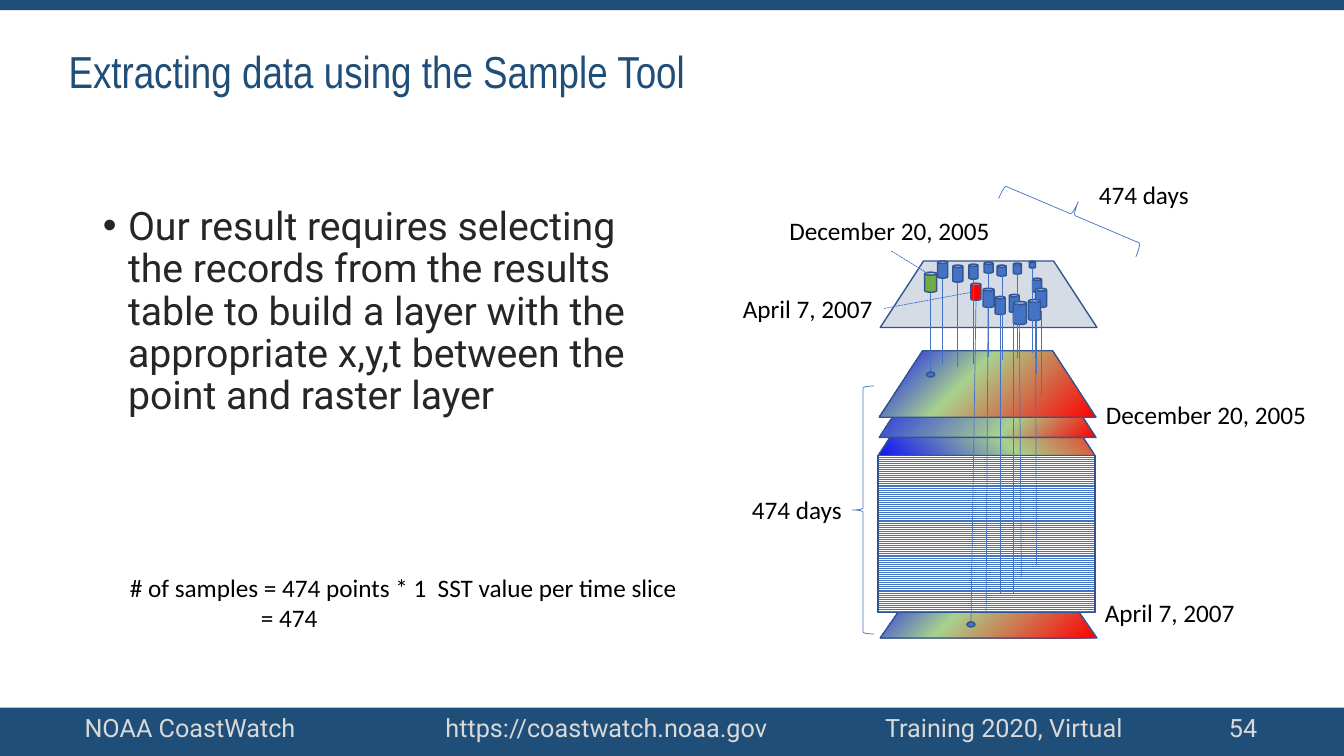
from lxml import etree
from pptx import Presentation
from pptx.dml.color import RGBColor
from pptx.enum.dml import MSO_LINE, MSO_PATTERN
from pptx.enum.shapes import MSO_CONNECTOR, MSO_SHAPE
from pptx.enum.text import MSO_ANCHOR, MSO_AUTO_SIZE, PP_ALIGN
from pptx.oxml.ns import qn
from pptx.util import Inches, Pt

RECT, CAN, OVAL = MSO_SHAPE.RECTANGLE, MSO_SHAPE.CAN, MSO_SHAPE.OVAL
LAYER = MSO_SHAPE.FLOWCHART_MANUAL_OPERATION
LEFT_BRACE, RIGHT_BRACE = MSO_SHAPE.LEFT_BRACE, MSO_SHAPE.RIGHT_BRACE
STRAIGHT, DASHED = MSO_CONNECTOR.STRAIGHT, MSO_LINE.SQUARE_DOT
STRIPES = MSO_PATTERN.LIGHT_HORIZONTAL
LEFT, MIDDLE = PP_ALIGN.LEFT, MSO_ANCHOR.MIDDLE
NO_FIT = MSO_AUTO_SIZE.NONE

CELL = 0.1  # the grid has ten columns and ten rows to the inch
COLUMNS, ROWS = 133.3, 75
LAYER_WIDTH = 21.5
DROP = 8.4  # rows spanned by a line that ends on the top layer

COLORS = {
    "navy": "1F4E79", "pale": "D9D9D9", "ink": "262626", "black": "000000",
    "white": "FFFFFF", "blue": "4472C4", "outline": "325491",
    "plane": "D6DCE5", "green": "70AD47", "red": "FF0000",
    "cold": "0C12F6", "mild": "A9D18E",
}

# left, top, height, share of the middle colour, cold corner (l, t, r, b)
TOP_LEFT, BOTTOM_LEFT = (0, 0, 100, 100), (0, 100, 100, 0)
LAYERS = [
    (87.3, 57.1, 6.2, 41, TOP_LEFT),
    (87.1, 38.6, 6.6, 50, BOTTOM_LEFT),
    (87.2, 36.8, 6.6, 65, TOP_LEFT),
    (87.2, 34.8, 6.6, 41, TOP_LEFT),
]
# left, top, width, height, colour
SAMPLES = [
    (93, 25.9, 1, 1.7, "blue"), (91.7, 27, 1.2, 2, "green"),
    (94.5, 26.3, 1, 1.7, "blue"), (96.1, 26.2, 0.9, 1.5, "blue"),
    (97.6, 26, 0.9, 1.1, "blue"), (98.9, 26.3, 0.9, 1.1, "blue"),
    (100.5, 26.1, 0.8, 1.1, "blue"), (102.4, 27.6, 0.9, 1.4, "blue"),
    (102.1, 25.9, 0.6, 0.7, "blue"), (102.7, 28.6, 1.1, 1.9, "blue"),
    (102, 29.7, 1.2, 2.1, "blue"), (100.1, 29.2, 1, 1.8, "blue"),
    (98.7, 29.4, 1, 1.8, "blue"), (97.5, 28.6, 1.1, 1.9, "blue"),
    (96.3, 28.1, 1, 1.7, "red"), (100.5, 29.9, 1.3, 2.3, "blue"),
]
SHORT_DROPS = [
    (92.3, 29.1), (93.5, 27.7), (96.5, 27.7), (95, 28), (103.3, 30.9),
    (102.8, 28.7), (98, 27), (99.4, 27.3), (100.9, 27.1), (102.4, 26.6),
]
LONG_DROPS = [
    (96.8, 29.9, 96.3, 61.9), (98, 30.5, 97.8, 60.9),
    (99.2, 31.3, 99.2, 58.8), (101.1, 32.2, 101.3, 57.3),
    (100.5, 31, 100.5, 58.8), (102.7, 31.8, 102.8, 56.1),
]
LEADERS = [(88.4, 24.9, 92.3, 27.3), (87.7, 30.6, 96.3, 29)]
LABELS = [
    (73.6, 48.6, 11, "474 days"), (108, 17.3, 11, "474 days"),
    (108.7, 39.1, 22.1, "December 20, 2005"),
    (77.3, 20.9, 22.1, "December 20, 2005"),
    (108.6, 58.8, 15, "April 7, 2007"), (72.7, 28.6, 15, "April 7, 2007"),
]
FOOTER = [
    (7.4, 23, "NOAA CoastWatch"), (43.2, 35, "https://coastwatch.noaa.gov"),
    (86.8, 27, "Training 2020, Virtual"), (120.9, 6, "54"),
]


def cells(*counts):
    return [Inches(count * CELL) for count in counts]


def color(name):
    return RGBColor.from_string(COLORS[name])


def add_span(para, text, font, size, ink):
    span = para.add_run()
    span.text = text
    span.font.name, span.font.size = font, Pt(size)
    span.font.color.rgb = color(ink)


def add_label(page, left, top, width, text, font="Calibri", ink="black"):
    box = page.shapes.add_textbox(*cells(left, top, width, 4))
    box.text_frame.word_wrap = False
    add_span(box.text_frame.paragraphs[0], text, font, 18, ink)
    return box.text_frame


def add_form(page, kind, area, fill=None, line="outline", weight=1):
    form = page.shapes.add_shape(kind, *cells(*area))
    form.shadow.inherit = False
    if fill:
        form.fill.solid()
        form.fill.fore_color.rgb = color(fill)
    else:
        form.fill.background()
    if line:
        form.line.color.rgb = color(line)
        form.line.width = Pt(weight)
    else:
        form.line.fill.background()
    return form


def add_layer(page, left, top, height, fill=None):
    layer = add_form(page, LAYER, (left, top, LAYER_WIDTH, height), fill)
    layer._element.spPr.find(qn("a:xfrm")).set("flipV", "1")
    return layer


def fill_temperature(layer, middle, corner):
    """Spread cold to hot colours outwards from one corner of the layer."""
    properties = layer._element.spPr
    gradient = etree.Element(qn("a:gradFill"), rotWithShape="1")
    stops = etree.SubElement(gradient, qn("a:gsLst"))
    for share, name in ((0, "cold"), (middle, "mild"), (100, "red")):
        stop = etree.SubElement(stops, qn("a:gs"), pos=str(share * 1000))
        etree.SubElement(stop, qn("a:srgbClr"), val=COLORS[name])
    circle = etree.SubElement(gradient, qn("a:path"), path="circle")
    sides = {side: str(share * 1000) for side, share in zip("ltrb", corner)}
    etree.SubElement(circle, qn("a:fillToRect"), **sides)
    properties.replace(properties.find(qn("a:noFill")), gradient)


def add_line(page, ends, dash=None):
    line = page.shapes.add_connector(STRAIGHT, *cells(*ends))
    line.line.color.rgb = color("blue")
    line.line.width = Pt(0.5)
    if dash:
        line.line.dash_style = dash
    etree.SubElement(line._element.spPr, qn("a:effectLst"))


def fill_placeholder(holder, area, text, font, size, ink):
    holder.left, holder.top, holder.width, holder.height = cells(*area)
    frame = holder.text_frame
    frame.auto_size = NO_FIT
    para = frame.paragraphs[0]
    para.alignment, para.line_spacing, para.space_before = LEFT, 0.9, Pt(0)
    add_span(para, text, font, size, ink)
    return para


def add_bars(page):
    for top, height in ((0, 1), (70.2, 4.9)):
        add_form(page, RECT, (0, top, COLUMNS, height), "navy", None)
    for left, width, text in FOOTER:
        frame = add_label(page, left, 70.2, width, text, "Roboto", "pale")
        frame.vertical_anchor = MIDDLE


def add_text(page):
    title, body = page.placeholders
    fill_placeholder(title, (5.8, 0.1, 115, 14.5),
                     "Extracting data using the Sample Tool",
                     "Arial Narrow", 32, "navy")
    title.text_frame.vertical_anchor = MIDDLE
    para = fill_placeholder(
        body, (9.2, 20, 56.7, 47.6),
        "Our result requires selecting the records from the results table to "
        "build a layer with the appropriate x,y,t between the point and "
        "raster layer", "Roboto", 28, "ink")
    indents = para._p.get_or_add_pPr()
    indents.set("marL", str(Inches(0.25)))
    indents.set("indent", str(Inches(-0.25)))
    bullet_font = etree.SubElement(indents, qn("a:buFont"))
    bullet_font.set("typeface", "Arial")
    etree.SubElement(indents, qn("a:buChar")).set("char", "•")

    formula = add_label(page, 11.9, 56.3, 56.9,
                        "# of samples = 474 points * 1  SST value per time slice")
    result = formula.add_paragraph()
    result._p.get_or_add_pPr().set("marL", str(Inches(1.3)))
    add_span(result, "= 474", "Calibri", 18, "black")


def add_raster_stack(page):
    for left, top, height, middle, corner in LAYERS:
        fill_temperature(add_layer(page, left, top, height), middle, corner)
    stack = add_form(page, RECT, (87.1, 45.2, LAYER_WIDTH, 15.6), "blue")
    stack.fill.patterned()
    stack.fill.pattern = STRIPES
    stack.fill.fore_color.rgb = color("blue")
    stack.fill.back_color.rgb = color("white")


def add_samples(page):
    add_layer(page, 87.3, 25.9, 6.6, "plane")
    for *area, fill in SAMPLES:
        add_form(page, CAN, area, fill)
    for x, y in SHORT_DROPS:
        add_line(page, (x, y, x, y + DROP))
    for ends in LONG_DROPS:
        add_line(page, ends)
    for ends in LEADERS:
        add_line(page, ends, DASHED)
    for left, top in ((91.9, 36.9), (95.9, 61.7)):
        add_form(page, OVAL, (left, top, 0.8, 0.5), "blue")


def add_day_counts(page):
    add_form(page, LEFT_BRACE, (84.5, 38.3, 2.2, 24.6), None, "blue", 0.5)
    tilted = add_form(page, RIGHT_BRACE, (105, 13.9, 2.8, 14.8), None, "blue", 0.5)
    tilted.rotation = 293
    for label in LABELS:
        add_label(page, *label)


def main():
    deck = Presentation()
    deck.slide_width, deck.slide_height = cells(COLUMNS, ROWS)
    page = deck.slides.add_slide(deck.slide_layouts[1])
    add_bars(page)
    add_text(page)
    add_raster_stack(page)
    add_samples(page)
    add_day_counts(page)
    deck.save("out.pptx")


if __name__ == "__main__":
    main()
